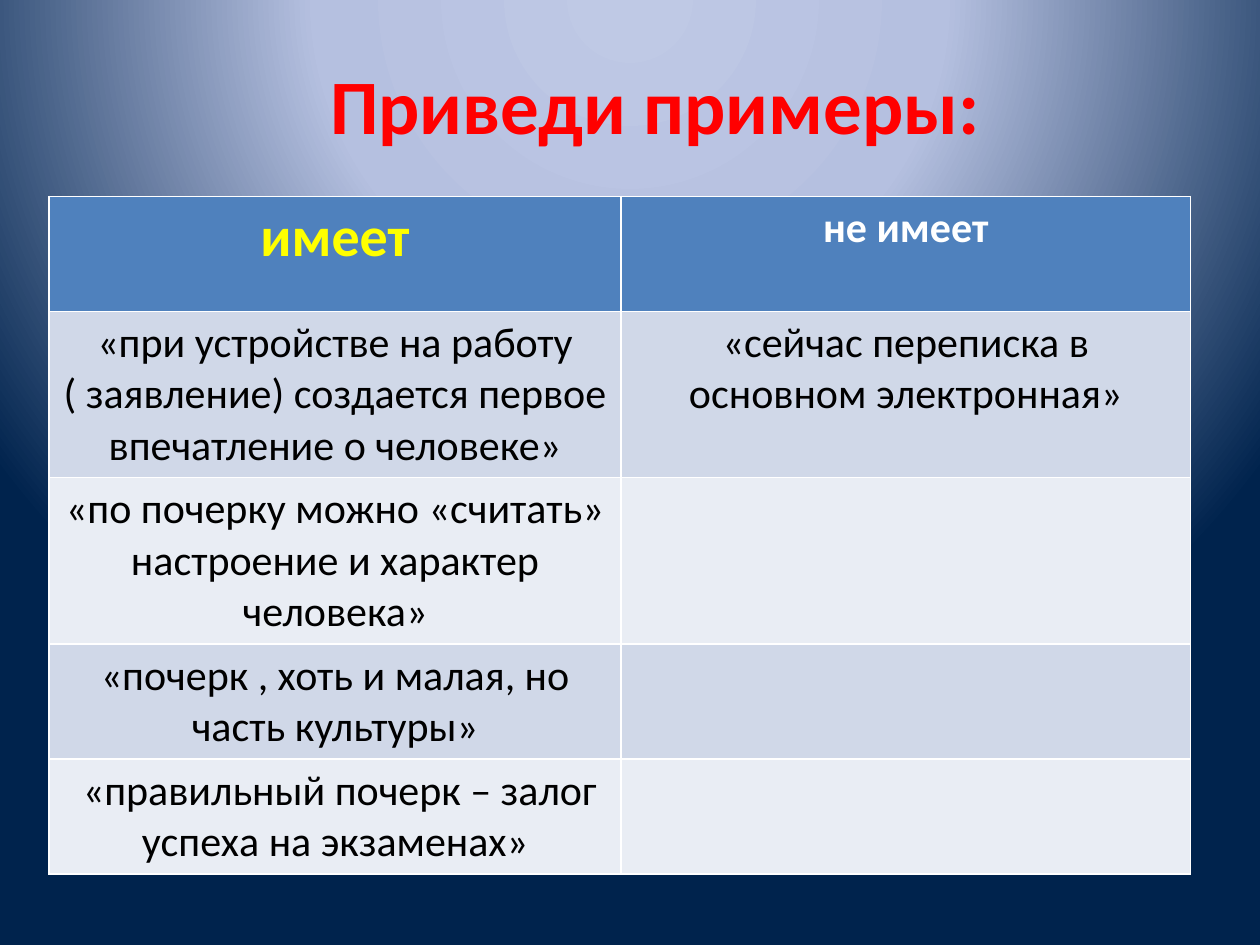
"""Build a slide with a two-column table of examples about handwriting."""
from pptx import Presentation
from pptx.dml.color import RGBColor
from pptx.enum.text import MSO_ANCHOR, PP_ALIGN
from pptx.oxml import parse_xml
from pptx.oxml.ns import nsdecls
from pptx.util import Cm, Pt


def color(value):
    return RGBColor.from_string(value)


def format_text(text_frame, size, value, bold):
    for paragraph in text_frame.paragraphs:
        paragraph.alignment = PP_ALIGN.CENTER
        for run in paragraph.runs:
            run.font.name = "Calibri"
            run.font.size = Pt(size)
            run.font.bold = bold
            run.font.color.rgb = color(value)


presentation = Presentation()
presentation.slide_width = Cm(25.4)
presentation.slide_height = Cm(19.05)
slide = presentation.slides.add_slide(presentation.slide_layouts[6])

gradient = [(0, "BFC9E5"), (40, "B5C0E0"), (100, "00234D")]
stops = "".join(
    f'<a:gs pos="{position * 1000}"><a:srgbClr val="{value}"/></a:gs>'
    for position, value in gradient
)
background = parse_xml(
    f'<p:bg {nsdecls("p", "a")}><p:bgPr><a:gradFill rotWithShape="1">'
    f'<a:gsLst>{stops}</a:gsLst><a:path path="circle">'
    '<a:fillToRect l="50000" t="-80000" r="50000" b="180000"/></a:path>'
    '</a:gradFill><a:effectLst/></p:bgPr></p:bg>'
)
slide.element.cSld.insert(0, background)

title = slide.shapes.add_textbox(Cm(5.77), Cm(1), Cm(14.88), Cm(2.18))
title.text_frame.word_wrap = True
title.text_frame.vertical_anchor = MSO_ANCHOR.MIDDLE
title.text_frame.text = "Приведи примеры:"
format_text(title.text_frame, 44, "FF0000", True)
outline = parse_xml(
    f'<a:ln {nsdecls("a")} w="{Pt(1.42)}"><a:solidFill>'
    '<a:srgbClr val="D73A36"/></a:solidFill></a:ln>'
)
title.text_frame.paragraphs[0].runs[0].font._element.insert(0, outline)

rows = [
    ("имеет", "не имеет"),
    ("«при устройстве на работу\n( заявление) создается первое впечатление о человеке»",
     "«сейчас переписка в основном электронная»"),
    ("«по почерку можно «считать» настроение и характер человека»", ""),
    ("«почерк , хоть и малая, но часть культуры»", ""),
    (" «правильный почерк – залог успеха на экзаменах»", ""),
]
column_widths = [11.53, 11.48]
row_heights = [2.32, 3.35, 3.35, 2.32, 2.32]
header_styles = [(32, "FFFF00", True), (24, "FFFFFF", True)]
fills = ["4F81BD", "D0D8E8", "E9EDF4", "D0D8E8", "E9EDF4"]

table = slide.shapes.add_table(
    len(rows), len(column_widths), Cm(0.99), Cm(3.96),
    Cm(sum(column_widths)), Cm(sum(row_heights)),
).table
for column, width in zip(table.columns, column_widths):
    column.width = Cm(width)
for row_index, texts in enumerate(rows):
    table.rows[row_index].height = Cm(row_heights[row_index])
    for column_index, text in enumerate(texts):
        cell = table.cell(row_index, column_index)
        cell.fill.solid()
        cell.fill.fore_color.rgb = color(fills[row_index])
        cell.text_frame.text = text
        style = header_styles[column_index] if row_index == 0 else (24, "000000", False)
        format_text(cell.text_frame, *style)

presentation.save("out.pptx")
